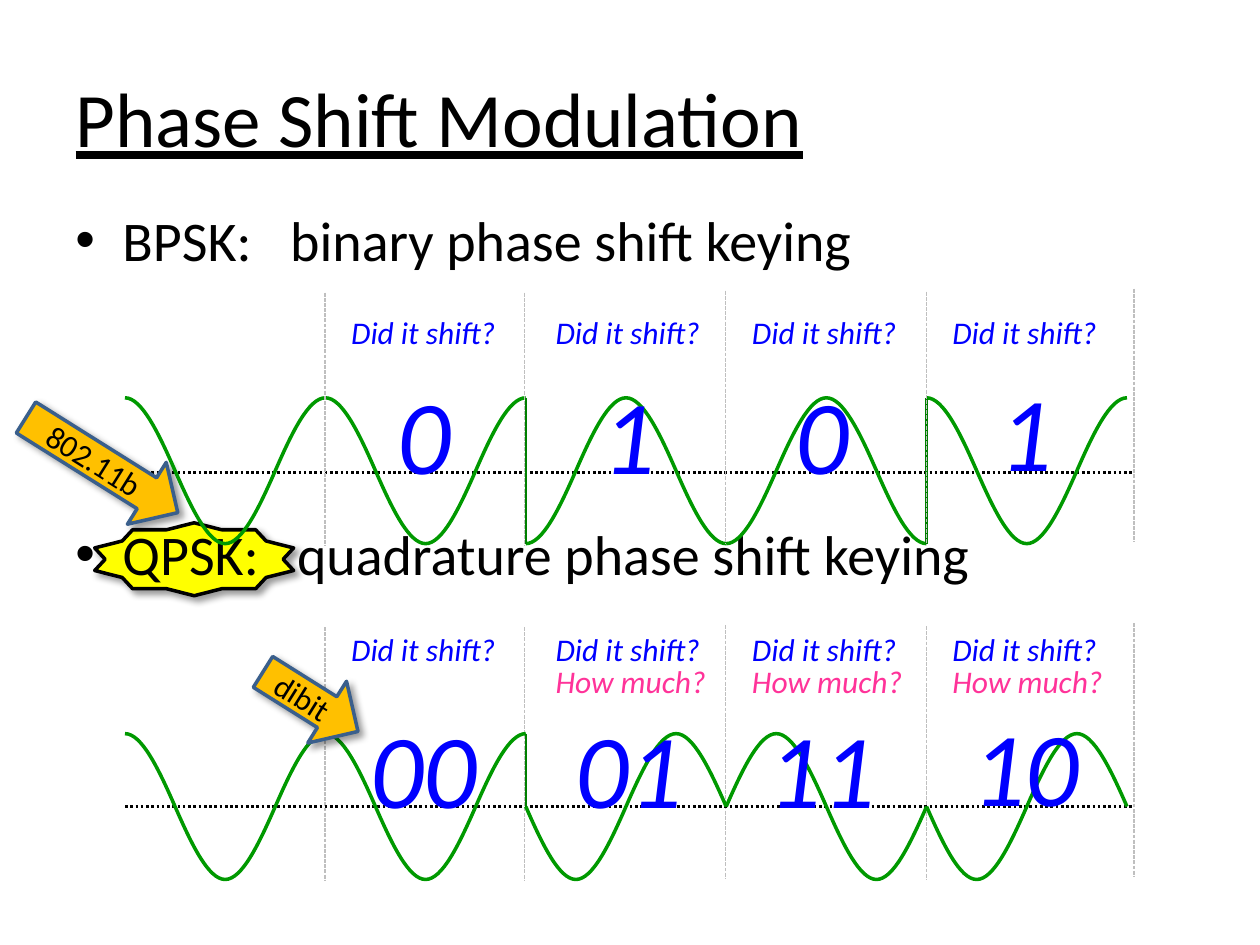
from math import cos, pi, radians, sin

from lxml.etree import SubElement
from pptx import Presentation
from pptx.dml.color import RGBColor
from pptx.enum.dml import MSO_LINE
from pptx.enum.shapes import MSO_CONNECTOR, MSO_SHAPE
from pptx.enum.text import MSO_ANCHOR, MSO_AUTO_SIZE, PP_ALIGN
from pptx.oxml.ns import qn
from pptx.util import Cm, Pt

COLORS = {
    "black": "000000", "guide": "BFBFBF", "wave": "009900", "jump": "008000",
    "star": "FFFF00", "arrow": "FFC000", "arrow_line": "3A5F8C",
    "question": "0000FF", "amount": "FF3399",
}
FONT = "Calibri"

# Grid of the signal diagrams, in cm
WAVE_LEFT, SYMBOL_WIDTH, AMPLITUDE = 2.52, 4.04, 1.47
RIGHT_EDGE = 22.86
GUIDES = [(6.55, 3.62), (10.57, 3.62), (14.63, 3.66), (18.67, 3.64), (RIGHT_EDGE, 3.7)]
GUIDE_HEIGHT = 5.11
LABEL_LEFTS = [6.83, 10.95, 14.91, 18.95]
VALUE_PLACES = [(6.88, 2.2), (11.02, 2.2), (14.91, 2.2), (19.02, 2.25)]


def color(name):
    return RGBColor.from_string(COLORS[name])


def add_run(paragraph, text, size, color_name="black", italic=False):
    run = paragraph.add_run()
    run.text = text
    run.font.name = FONT
    run.font.size = Pt(size)
    run.font.color.rgb = color(color_name)
    run.font.italic = italic
    return run


def add_text(slide, box, text, size, color_name, align=PP_ALIGN.LEFT, wrap=True):
    shape = slide.shapes.add_textbox(*map(Cm, box))
    shape.text_frame.word_wrap = wrap
    shape.text_frame.auto_size = MSO_AUTO_SIZE.SHAPE_TO_FIT_TEXT
    paragraph = shape.text_frame.paragraphs[0]
    paragraph.alignment = align
    add_run(paragraph, text, size, color_name, italic=True)


def add_line(slide, start, end, color_name, width, dash=None):
    line = slide.shapes.add_connector(
        MSO_CONNECTOR.STRAIGHT, *map(Cm, (*start, *end)))
    line.line.color.rgb = color(color_name)
    line.line.width = Pt(width)
    if dash:
        line.line.dash_style = dash
    SubElement(line._element.spPr, qn("a:effectLst"))


def add_shadowed_shape(slide, kind, box, fill, line):
    shape = slide.shapes.add_shape(kind, *map(Cm, box))
    shape.fill.solid()
    shape.fill.fore_color.rgb = color(fill)
    shape.line.color.rgb = color(line)
    shape.line.width = Pt(2)
    shape.shadow.inherit = False
    effects = shape._element.spPr.find(qn("a:effectLst"))
    shadow = SubElement(effects, qn("a:outerShdw"), blurRad=str(Pt(4)),
                        dist=str(Pt(3)), dir=str(45 * 60000), rotWithShape="0")
    shade = SubElement(shadow, qn("a:srgbClr"), val=COLORS["black"])
    SubElement(shade, qn("a:alpha"), val="40000")
    return shape


def add_arrow(slide, box, text):
    """A left arrow mirrored to point right, tilted downwards."""
    shape = add_shadowed_shape(slide, MSO_SHAPE.LEFT_ARROW, box, "arrow", "arrow_line")
    shape.rotation = 32.1
    shape._element.spPr.find(qn("a:xfrm")).set("flipH", "1")
    frame = shape.text_frame
    frame.word_wrap = True
    frame.vertical_anchor = MSO_ANCHOR.MIDDLE
    frame.paragraphs[0].alignment = PP_ALIGN.CENTER
    add_run(frame.paragraphs[0], text, 18)


def add_guides(slide, baseline):
    for x, rise in GUIDES:
        top = baseline - rise
        add_line(slide, (x, top), (x, top + GUIDE_HEIGHT), "guide", 0.75,
                 MSO_LINE.SQUARE_DOT)


def add_baseline(slide, baseline):
    add_line(slide, (WAVE_LEFT, baseline), (RIGHT_EDGE, baseline), "black", 1.5,
             MSO_LINE.ROUND_DOT)


def add_period(slide, left, middle, phase):
    """One period drawn as four cubic curves, a quarter turn each."""
    def point(quarter, shift=0):
        angle = radians(phase) + quarter * pi / 2
        slope = AMPLITUDE * sin(angle) * pi / 2
        return (Cm(left + SYMBOL_WIDTH * (quarter + shift) / 4),
                Cm(middle - AMPLITUDE * cos(angle) + slope * shift))

    builder = slide.shapes.build_freeform(*point(0))
    builder.add_line_segments([point(i) for i in range(1, 5)], close=False)
    wave = builder.convert_to_shape()
    for i, segment in enumerate(list(wave._element.iter(qn("a:lnTo")))):
        segment.tag = qn("a:cubicBezTo")
        segment.remove(segment[0])
        for x, y in (point(i, 1 / 3), point(i + 1, -1 / 3), point(i + 1)):
            SubElement(segment, qn("a:pt"), x=str(x - wave.left), y=str(y - wave.top))
    wave.fill.background()
    wave.line.color.rgb = color("wave")
    wave.line.width = Pt(2)
    wave.shadow.inherit = False


def add_waves(slide, middle, phases):
    """One period per symbol, joined by a vertical jump where the level breaks."""
    previous = None
    for i, phase in enumerate(phases):
        left = WAVE_LEFT + i * SYMBOL_WIDTH
        add_period(slide, left, middle, phase)
        level = middle - AMPLITUDE * cos(radians(phase))
        if previous is not None and abs(level - previous) > 0.01:
            add_line(slide, (left, previous), (left, level), "jump", 1.5)
        previous = level


def add_labels(slide, lefts, top, width, text, color_name):
    for left in lefts:
        add_text(slide, (left, top, width, 1.02), text, 18, color_name, wrap=False)


def add_values(slide, baseline, values):
    for (left, rise), value in zip(VALUE_PLACES, values):
        add_text(slide, (left, baseline - rise, 3.33, 2.82), value, 60, "question",
                 PP_ALIGN.CENTER)


def format_title(slide, text):
    title = slide.shapes.title
    title.left, title.top, title.width, title.height = map(Cm, (1.27, 0.76, 22.86, 3.18))
    title.text_frame.vertical_anchor = MSO_ANCHOR.MIDDLE
    paragraph = title.text_frame.paragraphs[0]
    paragraph.alignment = PP_ALIGN.LEFT
    add_run(paragraph, text, 44).font.underline = True


def add_bullets(slide, items):
    shape = slide.shapes.add_textbox(*map(Cm, (1.27, 4.01, 22.43, 13.97)))
    frame = shape.text_frame
    frame.word_wrap = True
    for i, (term, meaning, tab) in enumerate(items):
        paragraph = frame.add_paragraph() if i else frame.paragraphs[0]
        properties = paragraph._p.get_or_add_pPr()
        properties.set("marL", str(Cm(0.95)))
        properties.set("indent", str(Cm(-0.95)))
        SubElement(properties, qn("a:buFont"), typeface="Arial")
        SubElement(properties, qn("a:buChar"), char="•")
        tabs = SubElement(properties, qn("a:tabLst"))
        SubElement(tabs, qn("a:tab"), pos=str(Cm(tab)), algn="l")
        if i:
            paragraph.space_before = Pt(141)
        add_run(paragraph, f"{term}\t{meaning}", 32)


def main():
    presentation = Presentation()
    presentation.slide_width, presentation.slide_height = Cm(25.4), Cm(19.05)
    slide = presentation.slides.add_slide(presentation.slide_layouts[5])
    bpsk, qpsk = 9.52, 16.26

    # Title, highlight and bullets
    format_title(slide, "Phase Shift Modulation")
    add_guides(slide, qpsk)
    add_shadowed_shape(slide, MSO_SHAPE.STAR_10_POINT, (1.91, 10.54, 4.01, 1.47),
                       "star", "black")
    add_bullets(slide, [("BPSK:", "binary phase shift keying", 4.33),
                        ("QPSK:", "quadrature phase shift keying", 4.47)])

    # Binary keying diagram
    add_baseline(slide, bpsk)
    add_arrow(slide, (0.25, 8.64, 3.61, 1.47), "802.11b")
    add_labels(slide, LABEL_LEFTS, 6.19, 3.48, "Did it shift?", "question")
    add_waves(slide, 9.49, [0, 0, 180, 180, 0])
    add_guides(slide, bpsk)

    # Quadrature keying diagram
    add_baseline(slide, qpsk)
    add_labels(slide, LABEL_LEFTS, 12.57, 3.48, "Did it shift?", "question")
    add_labels(slide, LABEL_LEFTS[1:], 13.22, 3.6, "How much?", "amount")
    add_waves(slide, qpsk, [0, 0, 90, 270, 90])

    # Decoded bits
    add_values(slide, bpsk, ["0", "1", "0", "1"])
    add_values(slide, qpsk, ["00", "01", "11", "10"])
    add_arrow(slide, (5.13, 13.41, 2.26, 1.47), "dibit")

    presentation.save("out.pptx")


if __name__ == "__main__":
    main()
